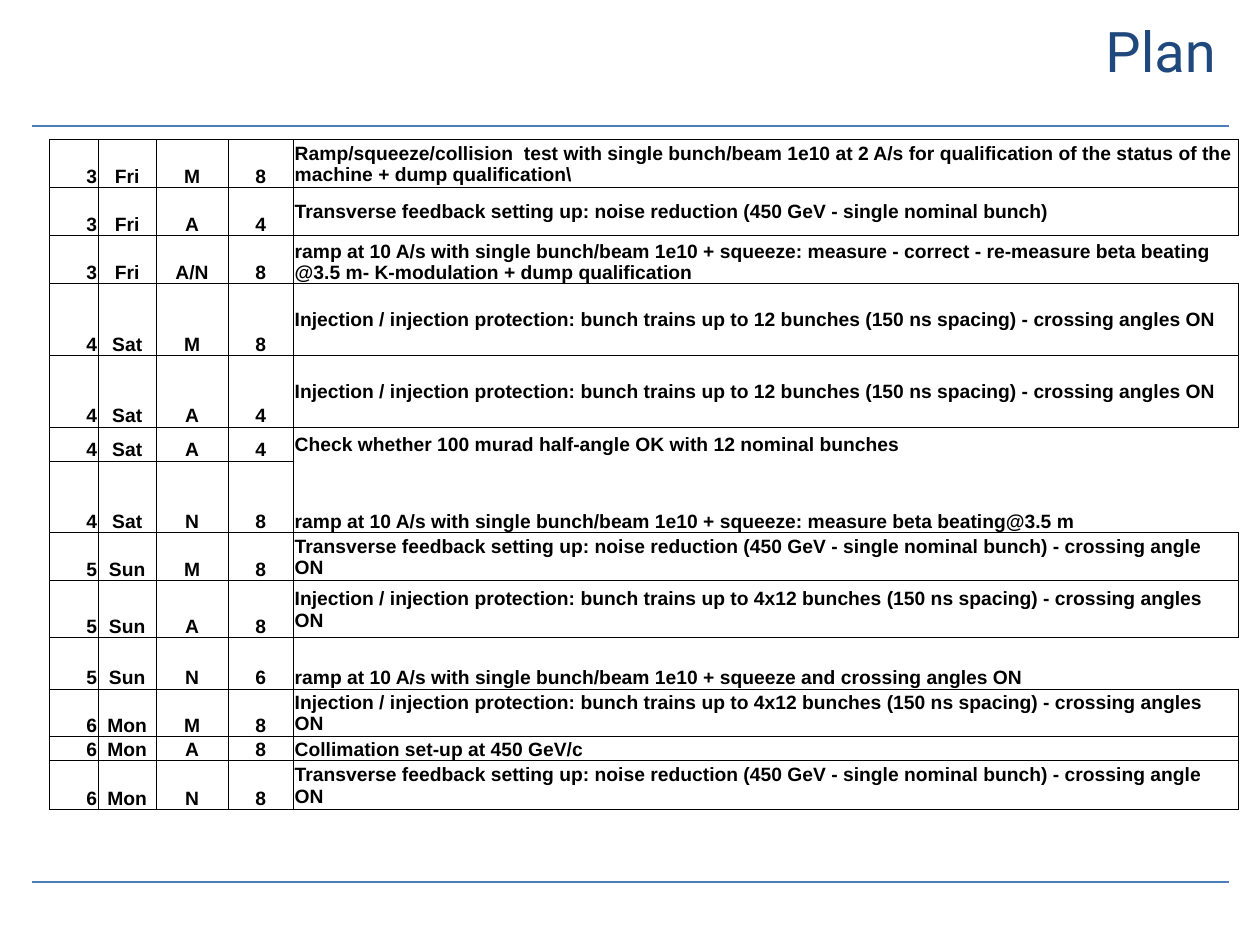
import dataclasses

import lxml.etree
import pptx
import pptx.dml.color
import pptx.enum.shapes
import pptx.enum.text
import pptx.oxml.ns
import pptx.slide
import pptx.table
import pptx.util
from pptx.util import Inches

BLACK = pptx.dml.color.RGBColor(0x00, 0x00, 0x00)
RULE_BLUE = pptx.dml.color.RGBColor(0x4B, 0x7E, 0xBC)
TITLE_BLUE = pptx.dml.color.RGBColor(0x1F, 0x49, 0x7D)

ALIGN = pptx.enum.text.PP_ALIGN
ANCHOR = pptx.enum.text.MSO_ANCHOR
ALL_SIDES = "LRTB"

COLUMN_WIDTHS = (0.39, 0.46, 0.57, 0.52, 7.5)
COLUMN_ALIGNMENTS = (ALIGN.RIGHT, ALIGN.CENTER, ALIGN.CENTER, ALIGN.CENTER, ALIGN.LEFT)

FEEDBACK = "Transverse feedback setting up: noise reduction (450 GeV - single nominal bunch)"
FEEDBACK_CROSSING = f"{FEEDBACK} - crossing angle ON"
INJECTION = (
    "Injection / injection protection: bunch trains up to {} bunches"
    " (150 ns spacing) - crossing angles ON"
)
RAMP = "ramp at 10 A/s with single bunch/beam 1e10 + squeeze"


@dataclasses.dataclass(frozen=True)
class Shift:
    height: float
    date: int
    day: str
    period: str
    hours: int
    task: str
    task_anchor: ANCHOR = ANCHOR.MIDDLE
    task_sides: str = ALL_SIDES


SHIFTS = (
    Shift(0.38, 3, "Fri", "M", 8,
          "Ramp/squeeze/collision  test with single bunch/beam 1e10 at 2 A/s for "
          "qualification of the status of the machine + dump qualification\\"),
    Shift(0.38, 3, "Fri", "A", 4, FEEDBACK),
    Shift(0.38, 3, "Fri", "A/N", 8,
          f"{RAMP}: measure - correct - re-measure beta beating "
          "@3.5 m- K-modulation + dump qualification", ANCHOR.BOTTOM, "LTB"),
    Shift(0.57, 4, "Sat", "M", 8, INJECTION.format("12")),
    Shift(0.57, 4, "Sat", "A", 4, INJECTION.format("12")),
    Shift(0.27, 4, "Sat", "A", 4,
          "Check whether 100 murad half-angle OK with 12 nominal bunches",
          ANCHOR.MIDDLE, "LT"),
    Shift(0.57, 4, "Sat", "N", 8, f"{RAMP}: measure beta beating@3.5 m",
          ANCHOR.BOTTOM, "LB"),
    Shift(0.38, 5, "Sun", "M", 8, FEEDBACK_CROSSING),
    Shift(0.45, 5, "Sun", "A", 8, INJECTION.format("4x12")),
    Shift(0.41, 5, "Sun", "N", 6, f"{RAMP} and crossing angles ON",
          ANCHOR.BOTTOM, "LTB"),
    Shift(0.38, 6, "Mon", "M", 8, INJECTION.format("4x12")),
    Shift(0.19, 6, "Mon", "A", 8, "Collimation set-up at 450 GeV/c"),
    Shift(0.39, 6, "Mon", "N", 8, FEEDBACK_CROSSING),
)


def add_rule(slide: pptx.slide.Slide, top: float) -> None:
    rule = slide.shapes.add_connector(
        pptx.enum.shapes.MSO_CONNECTOR.STRAIGHT,
        Inches(0.25), Inches(top), Inches(9.75), Inches(top),
    )
    rule.line.color.rgb = RULE_BLUE
    rule.line.width = pptx.util.Pt(1.5)
    properties = rule._element.spPr
    lxml.etree.SubElement(properties, pptx.oxml.ns.qn("a:effectLst"))


def format_title(slide: pptx.slide.Slide) -> None:
    title = slide.shapes.title
    title.left, title.top = Inches(0.75), Inches(0.11)
    title.width, title.height = Inches(9), Inches(0.57)
    text_frame = title.text_frame
    text_frame.text = "Plan"
    text_frame.auto_size = pptx.enum.text.MSO_AUTO_SIZE.NONE
    text_frame.vertical_anchor = ANCHOR.MIDDLE
    paragraph = text_frame.paragraphs[0]
    paragraph.alignment = ALIGN.RIGHT
    font = paragraph.runs[0].font
    font.name = "Roboto"
    font.size = pptx.util.Pt(32)
    font.color.rgb = TITLE_BLUE


def set_borders(cell: pptx.table._Cell, sides: str) -> None:
    qn = pptx.oxml.ns.qn
    properties = cell._tc.get_or_add_tcPr()
    for position, side in enumerate(ALL_SIDES):
        border = lxml.etree.Element(qn(f"a:ln{side}"), w=str(pptx.util.Pt(0.5)))
        if side in sides:
            fill = lxml.etree.SubElement(border, qn("a:solidFill"))
            lxml.etree.SubElement(fill, qn("a:srgbClr"), val=str(BLACK))
        else:
            lxml.etree.SubElement(border, qn("a:noFill"))
        properties.insert(position, border)


def fill_cell(
    cell: pptx.table._Cell, text: str, alignment: ALIGN, anchor: ANCHOR, sides: str
) -> None:
    cell.text_frame.text = text
    cell.vertical_anchor = anchor
    cell.margin_left = cell.margin_right = cell.margin_top = Inches(0.01)
    cell.margin_bottom = Inches(0)
    cell.fill.background()
    set_borders(cell, sides)
    paragraph = cell.text_frame.paragraphs[0]
    paragraph.alignment = alignment
    font = paragraph.runs[0].font
    font.name = "Arial"
    font.size = pptx.util.Pt(11)
    font.bold = True
    font.color.rgb = BLACK


def add_schedule(slide: pptx.slide.Slide) -> None:
    table = slide.shapes.add_table(
        len(SHIFTS), len(COLUMN_WIDTHS), Inches(0.39), Inches(1.11),
        Inches(sum(COLUMN_WIDTHS)), Inches(sum(shift.height for shift in SHIFTS)),
    ).table
    table.first_row = False
    table.horz_banding = False
    for column, width in zip(table.columns, COLUMN_WIDTHS):
        column.width = Inches(width)
    for row, shift in zip(table.rows, SHIFTS):
        row.height = Inches(shift.height)
        texts = (str(shift.date), shift.day, shift.period, str(shift.hours), shift.task)
        anchors = (ANCHOR.BOTTOM,) * 4 + (shift.task_anchor,)
        sides = (ALL_SIDES,) * 4 + (shift.task_sides,)
        for cell_values in zip(row.cells, texts, COLUMN_ALIGNMENTS, anchors, sides):
            fill_cell(*cell_values)


def main() -> None:
    presentation = pptx.Presentation()
    presentation.slide_width = Inches(10)
    presentation.slide_height = Inches(7.5)
    slide = presentation.slides.add_slide(presentation.slide_layouts[5])
    for top in (1, 7):
        add_rule(slide, top)
    format_title(slide)
    add_schedule(slide)
    presentation.save("out.pptx")


if __name__ == "__main__":
    main()
